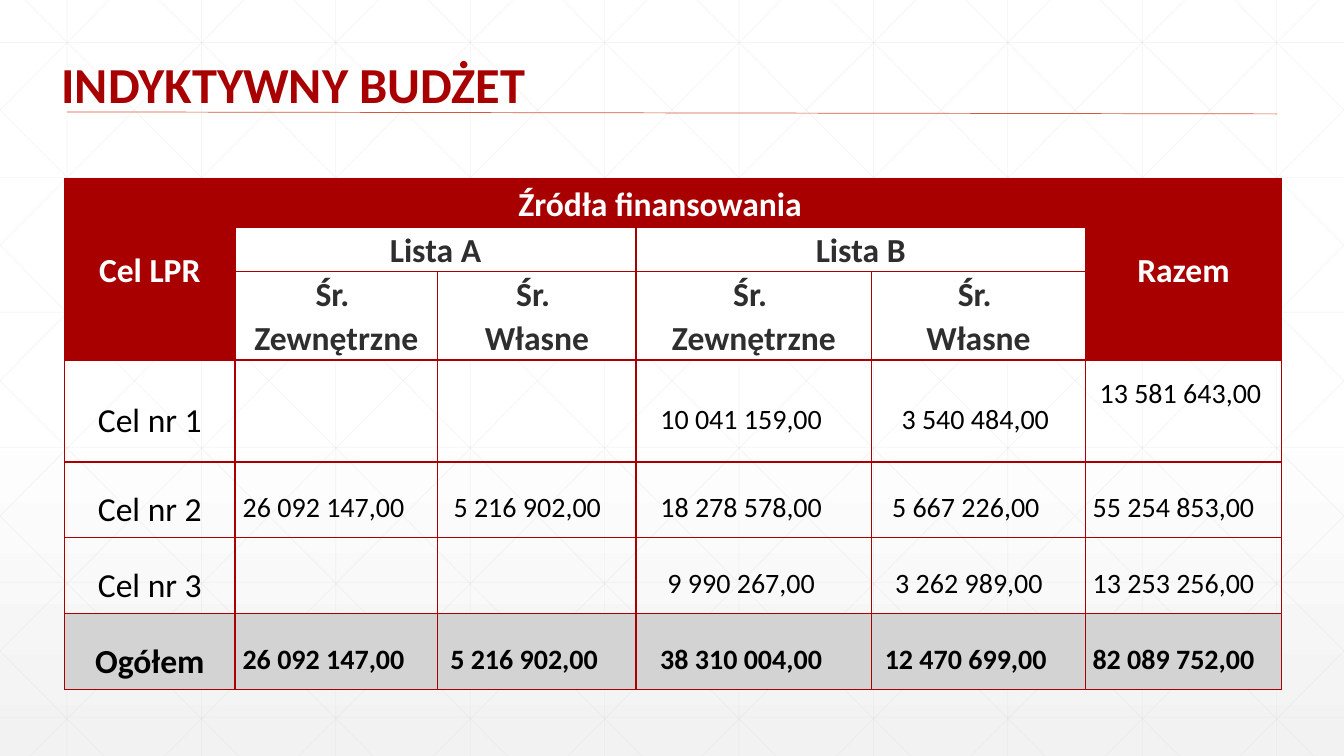
from lxml.etree import SubElement
from pptx import Presentation
from pptx.dml.color import RGBColor
from pptx.enum.shapes import MSO_CONNECTOR as Connector
from pptx.enum.text import MSO_ANCHOR as Anchor, PP_ALIGN as Align
from pptx.oxml import parse_xml
from pptx.oxml.ns import nsdecls, qn
from pptx.util import Cm, Pt

WIDTH, HEIGHT = 33.87, 19.05
RED, DARK, BLACK, WHITE = "A80000", "2D2E2D", "000000", "FFFFFF"


def paint(color, value):
    """Give a colour format the RGB value of a hex string."""
    color.rgb = RGBColor.from_string(value)


def add_line(start, end, color, width, alpha=100):
    line = page.shapes.add_connector(Connector.STRAIGHT, *map(Cm, (*start, *end)))
    paint(line.line.color, color)
    line.line.width = Pt(width)
    tint = line.line.fill.fore_color._xFill.find(qn("a:srgbClr"))
    SubElement(tint, qn("a:alpha")).set("val", str(alpha * 1000))
    SubElement(line._element.spPr, qn("a:effectLst"))


deck = Presentation()
deck.slide_width, deck.slide_height = Cm(WIDTH), Cm(HEIGHT)
page = deck.slides.add_slide(deck.slide_layouts[6])

# Background fading to light grey in the lower half
backdrop = page.background.fill
backdrop.gradient()
backdrop.gradient_angle = 270
for stop, position, color in zip(backdrop.gradient_stops, (0.53, 1), (WHITE, "F2F2F2")):
    stop.position = position
    paint(stop.color, color)

# Faint grid: verticals, horizontals, then diagonals clipped to the page
STEP = WIDTH / 10
DIAGONAL_RUN = 18.93
grid = [((x, 0), (x, HEIGHT)) for x in (1.69 + STEP * i for i in range(10))]
grid += [((0, y), (WIDTH, y)) for y in (1.07 + 3.4 * i for i in range(6))]
for i in range(-5, 10):
    top_x = 0.63 + STEP * i
    first = max(0, -top_x / DIAGONAL_RUN)
    last = min(1, (WIDTH - top_x) / DIAGONAL_RUN)
    ends = [(top_x + DIAGONAL_RUN * t, HEIGHT * t) for t in (first, last)]
    grid += [ends, [(WIDTH - x, y) for x, y in ends]]
for start, end in grid:
    add_line(start, end, "D9D9D9", 0.5, alpha=25)
add_line((1.69, 2.82), (32.18, 2.87), "D15A3E", 0.5)

# Budget table
COLUMNS = [4.29, 5.11, 5.0, 5.94, 5.38, 4.95]
ROWS = [1.24, 1.11, 2.22, 2.57, 1.91, 1.91, 1.91]
EXTERNAL, OWN = "Śr. \vZewnętrzne", "Śr. \vWłasne"
CELLS = [
    ["Cel LPR", "Źródła finansowania", "", "", "", "Razem"],
    ["", "Lista A", "", "Lista B", "", ""],
    ["", EXTERNAL, OWN, EXTERNAL, OWN, ""],
    ["Cel nr 1", "", "", "10 041 159,00", "3 540 484,00", "13 581 643,00"],
    ["Cel nr 2", "26 092 147,00", "5 216 902,00", "18 278 578,00", "5 667 226,00", "55 254 853,00"],
    ["Cel nr 3", "", "", "9 990 267,00", "3 262 989,00", "13 253 256,00"],
    ["Ogółem", "26 092 147,00", "5 216 902,00", "38 310 004,00", "12 470 699,00", "82 089 752,00"],
]
MERGES = [(0, 0, 2, 0), (0, 1, 0, 4), (0, 5, 2, 5), (1, 1, 1, 2), (1, 3, 1, 4)]
HEADER_ROWS, TOTAL_ROW, SUM_COLUMN = 3, 6, 5
# Right indent of the amounts, with the cells that differ from the usual one
INDENT, SUM_INDENT = 0.64, 0.5
INDENTS = {(3, 4): 0.16, (3, 5): 0.15, (4, 2): 0.48, (5, 4): 0.48}

frame = page.shapes.add_table(len(ROWS), len(COLUMNS), Cm(1.63), Cm(4.5),
                              Cm(sum(COLUMNS)), Cm(sum(ROWS)))
budget = frame.table
for column, width in zip(budget.columns, COLUMNS):
    column.width = Cm(width)
for row, height in zip(budget.rows, ROWS):
    row.height = Cm(height)

for r, texts in enumerate(CELLS):
    for c, text in enumerate(texts):
        cell = budget.cell(r, c)
        header, total, amount = r < HEADER_ROWS, r == TOTAL_ROW, r >= HEADER_ROWS and c > 0
        red = header and (r == 0 or c in (0, SUM_COLUMN))
        side = 0.05 if amount else 0.18
        usual = SUM_INDENT if c == SUM_COLUMN else INDENT
        indent = INDENTS.get((r, c), usual) if amount else 0
        layout = {
            "margin_left": Cm(side), "margin_right": Cm(side + indent),
            "margin_top": 0, "margin_bottom": 0,
            "vertical_anchor": Anchor.TOP if (r, c) == (3, SUM_COLUMN) else Anchor.MIDDLE,
        }
        for name, value in layout.items():
            setattr(cell, name, value)

        borders = cell._tc.get_or_add_tcPr()
        for edge in ("lnL", "lnR", "lnT", "lnB"):
            borders.append(parse_xml(
                f'<a:{edge} {nsdecls("a")} w="12700"><a:solidFill>'
                f'<a:srgbClr val="{RED}"/></a:solidFill></a:{edge}>'))
        if header or total:
            cell.fill.solid()
            paint(cell.fill.fore_color, RED if red else WHITE if header else "D3D3D3")
        else:
            cell.fill.background()

        para = cell.text_frame.paragraphs[0]
        para.text = text
        para.alignment = Align.CENTER
        para.line_spacing = 1.07 if header else 1.5
        style = {"name": "Calibri", "size": Pt(20 if amount else 24), "bold": header or total}
        for span in para.runs:
            for name, value in style.items():
                setattr(span.font, name, value)
            paint(span.font.color, WHITE if red else DARK if header else BLACK)

for top, left, bottom, right in MERGES:
    budget.cell(top, left).merge(budget.cell(bottom, right))

# Title
box = page.shapes.add_textbox(Cm(1.3), Cm(1.22), Cm(12.62), Cm(1.8))
box.text_frame.word_wrap = False
span = box.text_frame.paragraphs[0].add_run()
span.text = "INDYKTYWNY BUDŻET"
for name, value in {"name": "Calibri", "size": Pt(36), "bold": True}.items():
    setattr(span.font, name, value)
paint(span.font.color, RED)

deck.save("out.pptx")
